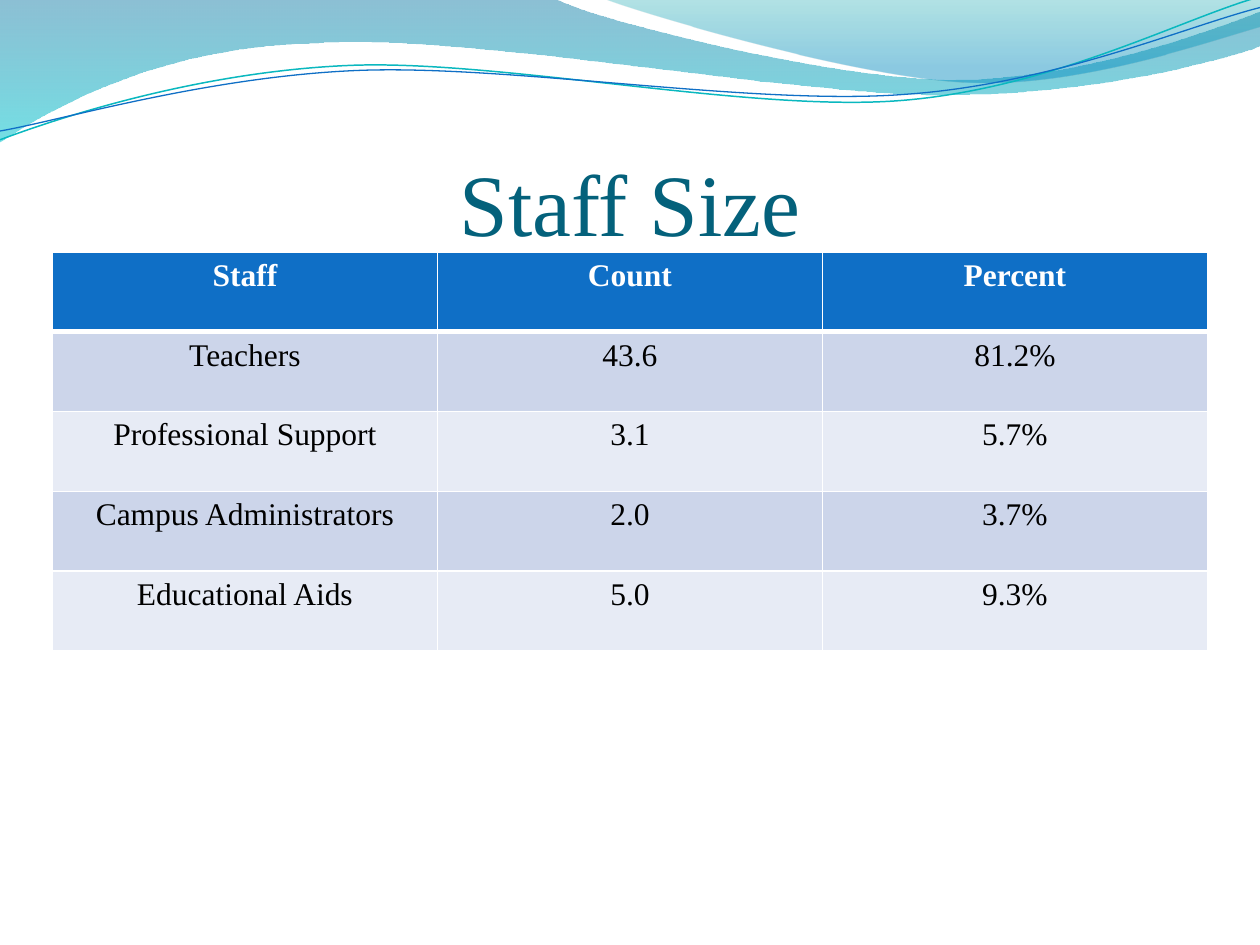
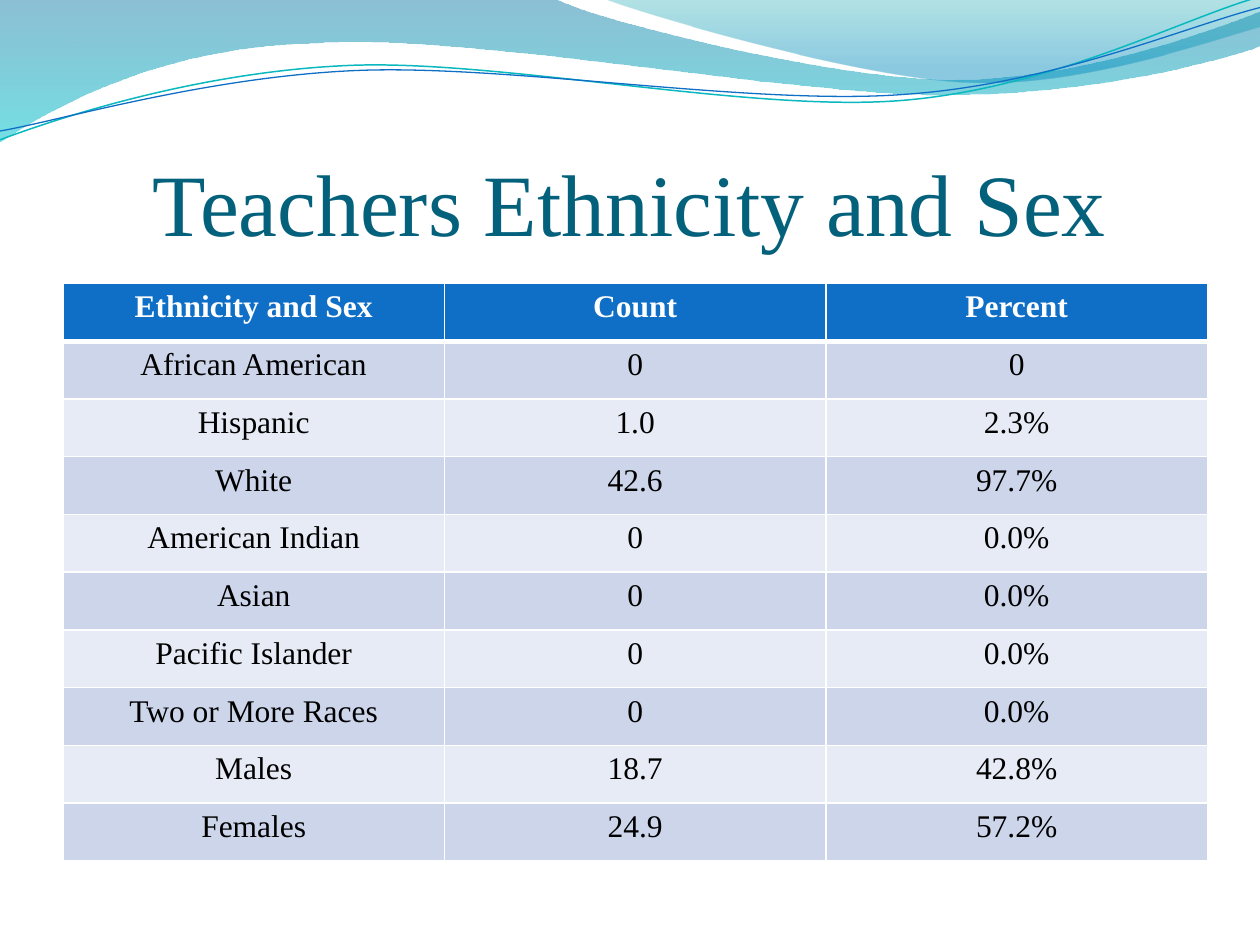
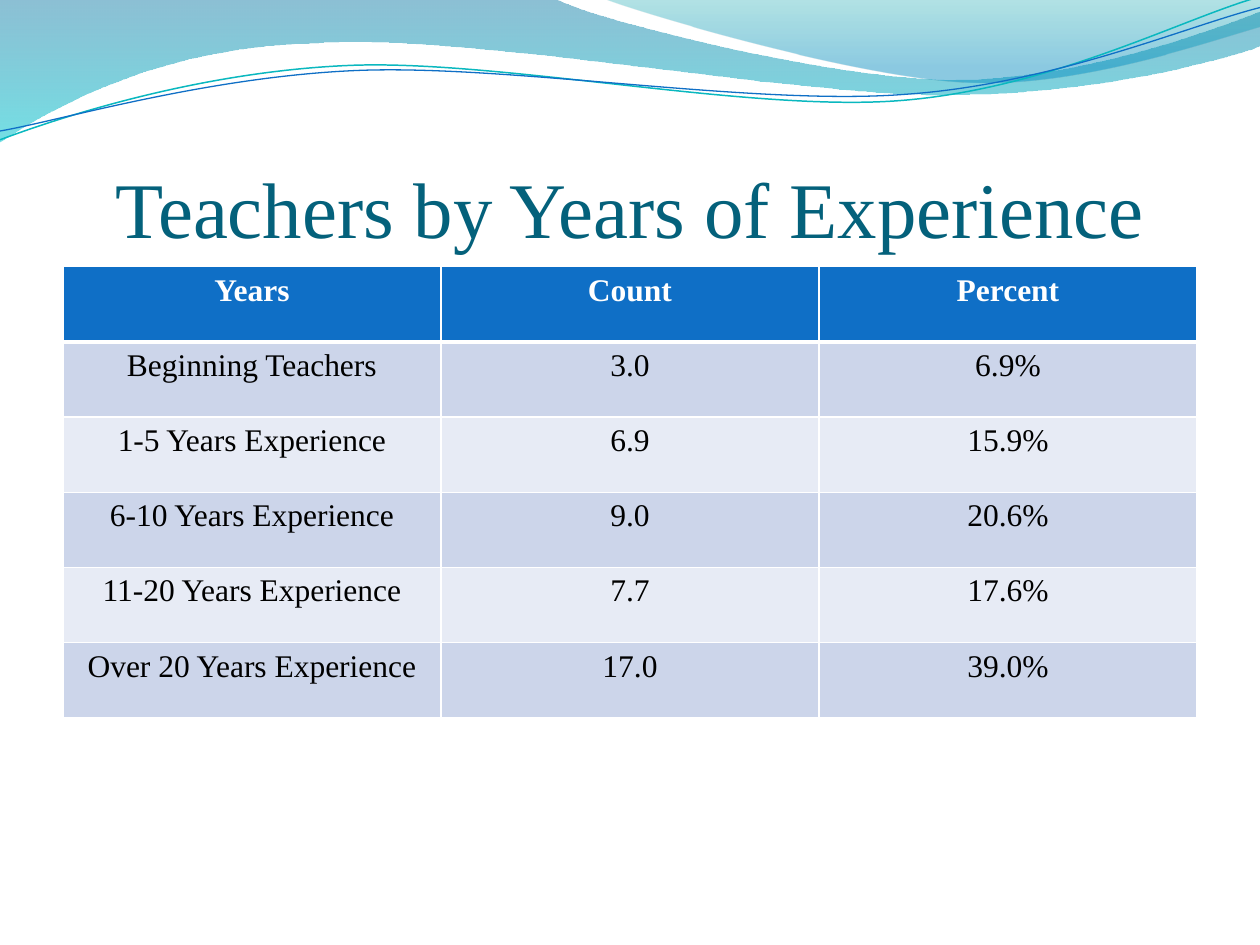
import lxml.etree
import pptx
import pptx.dml.color
import pptx.enum.text
import pptx.oxml.ns
import pptx.util

HUES = {
    "title": "04617B", "head": "0F6FC6", "odd": "CCD5EA", "even": "E7EBF5",
    "white": "FFFFFF", "black": "000000", "teal": "0AB8BF", "blue": "0F6FC6",
    "sea": "0074A1", "aqua": "00C6CF", "mint": "00A1A9", "sky": "008BBF",
}
FONT = "Times New Roman"
COLS, ROWS = 120, 90   # slide grid

# Wave points are in tenths of the slide's width: two numbers make
# a straight step, six make a curve.
BAND = [(0, 0), (4.4, -0.01), (4.76, 0.17, 6.64, 0.63, 7.58, 0.63),
        (8.53, 0.63, 9.58, 0.26, 10, 0.09), (10.01, 0.36),
        (9.83, 0.44, 8.7, 0.76, 7.46, 0.75),
        (6.22, 0.75, 3.82, 0.28, 2.57, 0.34),
        (1.29, 0.36, 0.46, 0.83, -0.01, 1.13)]
CREST = [(4.79, -0.01), (5.09, 0.11, 6.82, 0.62, 7.69, 0.65),
         (8.56, 0.69, 9.61, 0.32, 10, 0.21), (10, 0)]
UPPER = [(0, 1.11), (0.48, 0.93, 1.58, 0.57, 2.77, 0.52),
         (3.95, 0.47, 5.93, 0.89, 7.13, 0.8),
         (8.33, 0.71, 9.38, 0.15, 9.98, -0.02)]
LOWER = [(0, 1.04), (0.47, 0.96, 1.64, 0.61, 2.83, 0.56),
         (4.03, 0.51, 5.97, 0.84, 7.17, 0.75),
         (8.36, 0.67, 9.41, 0.21, 10, 0.06)]


def tint(name):
    return pptx.dml.color.RGBColor.from_string(HUES[name])


def sub(node, tag, **attrs):
    return lxml.etree.SubElement(node, pptx.oxml.ns.qn(tag), attrs)


class Deck:
    def __init__(self):
        self.file = pptx.Presentation()
        self.file.slide_width = pptx.util.Inches(10)
        self.file.slide_height = pptx.util.Inches(7.5)
        self.base = self.file.slide_layouts.get_by_name("Title Only")
        self.slide = None

    def box(self, x, y, w, h):
        col = self.file.slide_width / COLS
        row = self.file.slide_height / ROWS
        return [round(n) for n in (x * col, y * row, w * col, h * row)]

    def page(self, text, size):
        first = self.slide is None
        self.slide = self.file.slides.add_slide(self.base)
        if first:
            self.waves()
        self.title(text, size)

    # Shared waves, kept on the layout
    def waves(self):
        self.wash(BAND, ("sea", 0, 45), ("aqua", 1, 55))
        self.wash(CREST, ("mint", 0, 30), ("sky", 0.8, 45))
        self.curve(UPPER, "teal", 0.85)
        self.curve(LOWER, "blue", 0.75)

    def form(self, steps, close):
        unit = self.file.slide_width / 10
        steps = [[round(n * unit) for n in step] for step in steps]
        dots = [step[-2:] for step in steps]
        pen = self.slide.shapes.build_freeform(*dots[0])
        pen.add_line_segments(dots[1:], close=close)
        shape = pen.convert_to_shape()
        shape.shadow.inherit = False
        self.bend(shape, steps[1:])
        self.base.shapes.element.append(shape.element)
        return shape

    def bend(self, shape, steps):
        """Turn the straight segments of six-number steps into curves."""
        lines = list(shape.element.iter(pptx.oxml.ns.qn("a:lnTo")))
        for line, step in zip(lines, steps):
            if len(step) == 6:
                arc = lxml.etree.Element(pptx.oxml.ns.qn("a:cubicBezTo"))
                for x, y in zip(step[::2], step[1::2]):
                    sub(arc, "a:pt", x=str(x - shape.left), y=str(y - shape.top))
                line.getparent().replace(line, arc)

    def wash(self, steps, *stops):
        shape = self.form(steps, True)
        shape.line.fill.background()
        shape.fill.gradient()
        shape.fill.gradient_angle = 270
        for stop, (hue, place, _) in zip(shape.fill.gradient_stops, stops):
            stop.color.rgb = tint(hue)
            stop.position = place
        marks = shape.element.spPr.iter(pptx.oxml.ns.qn("a:srgbClr"))
        for mark, (_, _, alpha) in zip(marks, stops):
            sub(mark, "a:alpha", val=str(alpha * 1000))

    def curve(self, steps, hue, width):
        shape = self.form(steps, False)
        shape.fill.background()
        shape.line.color.rgb = tint(hue)
        shape.line.width = pptx.util.Pt(width)

    # Text
    def style(self, para, size, hue, bold=False):
        para.alignment = pptx.enum.text.PP_ALIGN.CENTER
        for run in para.runs:
            run.font.name = FONT
            run.font.size = pptx.util.Pt(size)
            run.font.bold = bold
            run.font.color.rgb = tint(hue)

    def title(self, text, size):
        shape = self.slide.shapes.title
        shape.left, shape.top, shape.width, shape.height = self.box(6, 9.2, 108, 15)
        frame = shape.text_frame
        frame.text = text
        frame.word_wrap = True
        frame.auto_size = pptx.enum.text.MSO_AUTO_SIZE.NONE
        frame.vertical_anchor = pptx.enum.text.MSO_ANCHOR.BOTTOM
        frame.margin_left = frame.margin_right = frame.margin_bottom = 0
        frame.margin_top = pptx.util.Inches(0.05)
        self.style(frame.paragraphs[0], size, "title")

    # Tables
    def edge(self, cell, top, base):
        props = cell._tc.get_or_add_tcPr()
        for side, width in zip("LRTB", (1, 1, top, base)):
            line = sub(props, "a:ln" + side, w=str(pptx.util.Pt(width)))
            sub(sub(line, "a:solidFill"), "a:srgbClr", val=HUES["white"])

    def table(self, x, y, w, h, data):
        wide, high = len(data[0]), len(data)
        grid = self.slide.shapes.add_table(high, wide, *self.box(x, y, w, h)).table
        for col in grid.columns:
            col.width = self.box(0, 0, w / wide, 0)[2]
        for r, (row, texts) in enumerate(zip(grid.rows, data)):
            row.height = self.box(0, 0, 0, h / high)[3]
            head = r == 0
            fill = "head" if head else ("even", "odd")[r % 2]
            for cell, text in zip(row.cells, texts):
                cell.text_frame.text = text
                self.style(cell.text_frame.paragraphs[0], 18,
                           "white" if head else "black", head)
                self.edge(cell, 3 if r == 1 else 1, 3 if head else 1)
                cell.fill.solid()
                cell.fill.fore_color.rgb = tint(fill)


def main():
    deck = Deck()

    # Staff size
    deck.page("Staff Size", 50)
    deck.table(5, 24, 110, 38, [
        ("Staff", "Count", "Percent"),
        ("Teachers", "43.6", "81.2%"),
        ("Professional Support", "3.1", "5.7%"),
        ("Campus Administrators", "2.0", "3.7%"),
        ("Educational Aids", "5.0", "9.3%"),
    ])

    # Ethnicity and sex
    deck.page("Teachers Ethnicity and Sex", 50)
    deck.table(6, 27, 109, 55, [
        ("Ethnicity and Sex", "Count", "Percent"),
        ("African American", "0", "0"),
        ("Hispanic", "1.0", "2.3%"),
        ("White", "42.6", "97.7%"),
        ("American Indian", "0", "0.0%"),
        ("Asian", "0", "0.0%"),
        ("Pacific Islander", "0", "0.0%"),
        ("Two or More Races", "0", "0.0%"),
        ("Males", "18.7", "42.8%"),
        ("Females", "24.9", "57.2%"),
    ])

    # Years of experience
    deck.page("Teachers by Years of Experience", 45)
    deck.table(6, 25.4, 108, 43, [
        ("Years", "Count", "Percent"),
        ("Beginning Teachers", "3.0", "6.9%"),
        ("1-5 Years Experience", "6.9", "15.9%"),
        ("6-10 Years Experience", "9.0", "20.6%"),
        ("11-20 Years Experience", "7.7", "17.6%"),
        ("Over 20 Years Experience", "17.0", "39.0%"),
    ])

    deck.file.save("out.pptx")


if __name__ == "__main__":
    main()
